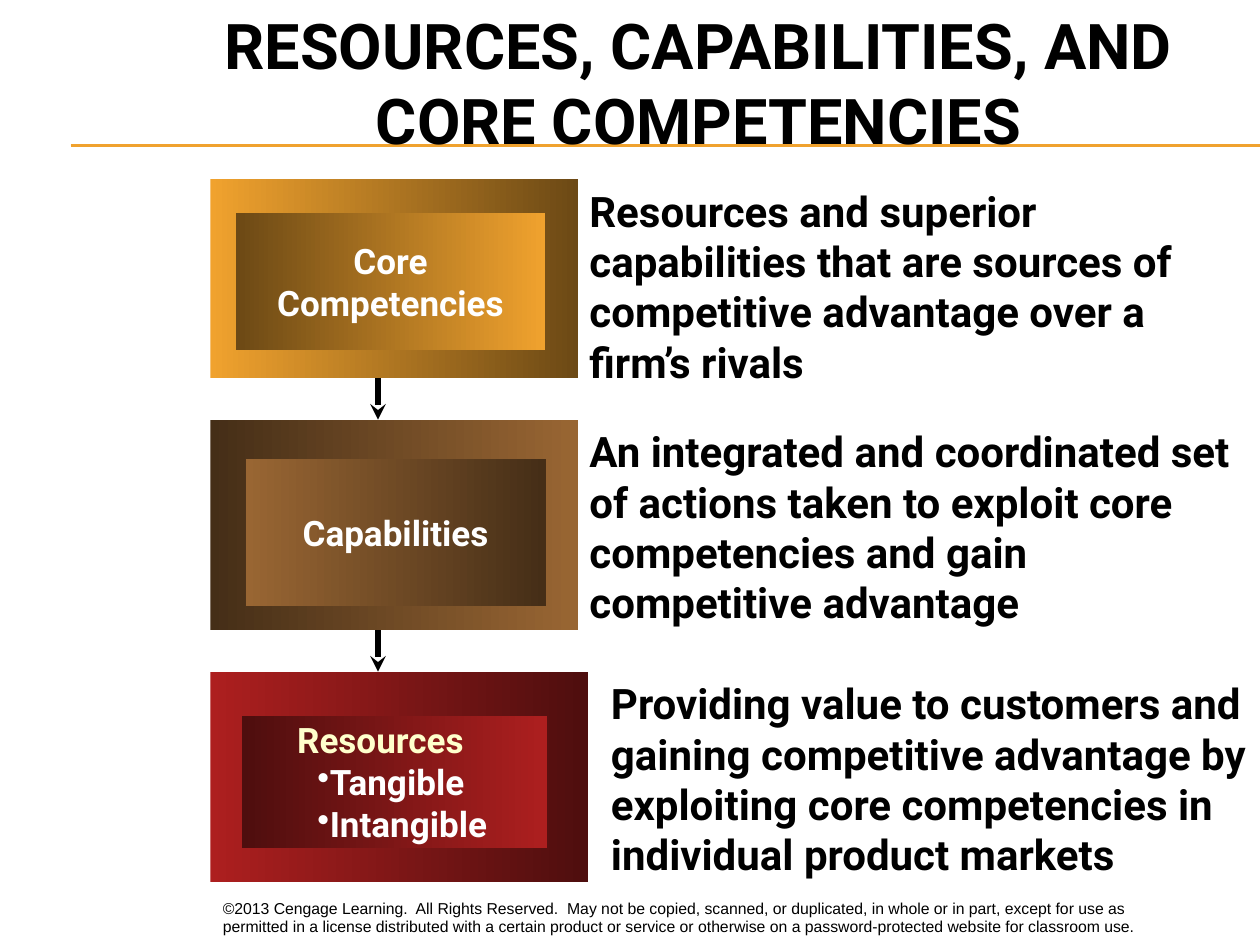
from dataclasses import dataclass

from lxml.etree import SubElement
from pptx import Presentation
from pptx.dml.color import RGBColor
from pptx.enum.shapes import MSO_CONNECTOR, MSO_SHAPE
from pptx.enum.text import MSO_ANCHOR, PP_ALIGN
from pptx.oxml.ns import qn
from pptx.util import Inches, Pt

BLACK = RGBColor(0x00, 0x00, 0x00)
WHITE = RGBColor(0xFF, 0xFF, 0xFF)
CREAM = RGBColor(0xFF, 0xFF, 0xCC)
GOLD = RGBColor(0xF0, 0xA2, 0x2E)
DARK_GOLD = RGBColor(0x6C, 0x49, 0x15)
BROWN = RGBColor(0x99, 0x66, 0x33)
DARK_BROWN = RGBColor(0x45, 0x2E, 0x17)
RED = RGBColor(0xAD, 0x1F, 0x1F)
DARK_RED = RGBColor(0x4E, 0x0E, 0x0E)

LEFT = 1.67
ARROW_X = 3

Box = tuple[float, float, float, float]


@dataclass
class Level:
    outer: Box
    inner: Box
    start: RGBColor
    end: RGBColor
    label: str
    meaning: str
    meaning_box: Box


LEVELS = [
    Level((LEFT, 1.42, 2.92, 1.58), (1.87, 1.69, 2.46, 1.09), GOLD, DARK_GOLD,
          "Core Competencies",
          "Resources and superior capabilities that are sources of "
          "competitive advantage over a firm’s rivals",
          (4.58, 1.42, 5.17, 1.72)),
    Level((LEFT, 3.33, 2.92, 1.67), (1.95, 3.64, 2.38, 1.17), DARK_BROWN, BROWN,
          "Capabilities",
          "An integrated and coordinated set of actions taken to exploit core "
          "competencies and gain competitive advantage",
          (4.58, 3.33, 5.42, 1.72)),
    Level((LEFT, 5.33, 3, 1.67), (1.92, 5.68, 2.42, 1.05), RED, DARK_RED,
          "Resources",
          "Providing value to customers and gaining competitive advantage by "
          "exploiting core competencies in individual product markets",
          (4.75, 5.33, 5.25, 1.72)),
]
RESOURCE_KINDS = ["Tangible", "Intangible"]


def write(paragraph, text: str, *, size: float, color: RGBColor = BLACK,
          font: str = "Roboto", bold: bool = True, align=PP_ALIGN.LEFT,
          margin: float = 0, indent: float = 0, bullet: str = "") -> None:
    properties = paragraph._p.get_or_add_pPr()
    properties.set("marL", str(Inches(margin)))
    properties.set("indent", str(Inches(indent)))
    if bullet:
        SubElement(properties, qn("a:buChar")).set("char", bullet)
    paragraph.alignment = align
    run = paragraph.add_run()
    run.text = text
    run.font.name = font
    run.font.size = Pt(size)
    run.font.bold = bold
    run.font.color.rgb = color


def add_text(slide, box: Box, text: str, **text_format) -> None:
    frame = slide.shapes.add_textbox(*map(Inches, box)).text_frame
    frame.word_wrap = True
    write(frame.paragraphs[0], text, **text_format)


def add_gradient_box(slide, box: Box, start: RGBColor, end: RGBColor):
    """Draw a rectangle shaded from left to right and return its text frame."""
    rectangle = slide.shapes.add_shape(MSO_SHAPE.RECTANGLE, *map(Inches, box))
    rectangle.shadow.inherit = False
    rectangle.line.fill.background()
    rectangle.fill.gradient()
    rectangle.fill.gradient_angle = 0
    for stop, color in zip(rectangle.fill.gradient_stops, (start, end)):
        stop.color.rgb = color
    frame = rectangle.text_frame
    frame.word_wrap = True
    frame.vertical_anchor = MSO_ANCHOR.MIDDLE
    return frame


def add_line(slide, start: tuple[float, float], end: tuple[float, float],
             color: RGBColor, width: float, arrow: bool = False) -> None:
    connector = slide.shapes.add_connector(
        MSO_CONNECTOR.STRAIGHT, *map(Inches, start + end))
    connector.line.color.rgb = color
    connector.line.width = Pt(width)
    if arrow:
        SubElement(connector.line._get_or_add_ln(), qn("a:tailEnd")).set("type", "stealth")
    SubElement(connector._element.spPr, qn("a:effectLst"))


def add_level(slide, level: Level) -> None:
    add_gradient_box(slide, level.outer, level.start, level.end)
    frame = add_gradient_box(slide, level.inner, level.end, level.start)
    heading = frame.paragraphs[0]
    if level.label == "Resources":
        write(heading, level.label, size=20, color=CREAM, margin=0.34)
        for kind in RESOURCE_KINDS:
            write(frame.add_paragraph(), kind, size=20, color=WHITE,
                  margin=0.26, indent=0.24, bullet="•")
    else:
        write(heading, level.label, size=20, color=WHITE, align=PP_ALIGN.CENTER)
    add_text(slide, level.meaning_box, level.meaning, size=24)


def main() -> None:
    presentation = Presentation()
    presentation.slide_width = Inches(10)
    presentation.slide_height = Inches(7.5)
    slide = presentation.slides.add_slide(presentation.slide_layouts[6])

    for y in (1.15, 1.16):
        add_line(slide, (0.56, y), (10, y), GOLD, 0.75)
    add_text(slide, (LEFT, 7.08, 7.5, 0.58),
             "©2013 Cengage Learning.  All Rights Reserved.  May not be copied, "
             "scanned, or duplicated, in whole or in part, except for use as "
             "permitted in a license distributed with a certain product or service "
             "or otherwise on a password-protected website for classroom use.",
             size=9, font="Arial", bold=False)
    add_text(slide, (LEFT, 0, 7.75, 2.09),
             "RESOURCES, CAPABILITIES, AND CORE COMPETENCIES",
             size=36, align=PP_ALIGN.CENTER)

    for level in LEVELS:
        add_level(slide, level)
    for upper, lower in zip(LEVELS, LEVELS[1:]):
        bottom = upper.outer[1] + upper.outer[3]
        add_line(slide, (ARROW_X, bottom), (ARROW_X, lower.outer[1]),
                 BLACK, 3, arrow=True)

    presentation.save("out.pptx")


if __name__ == "__main__":
    main()
